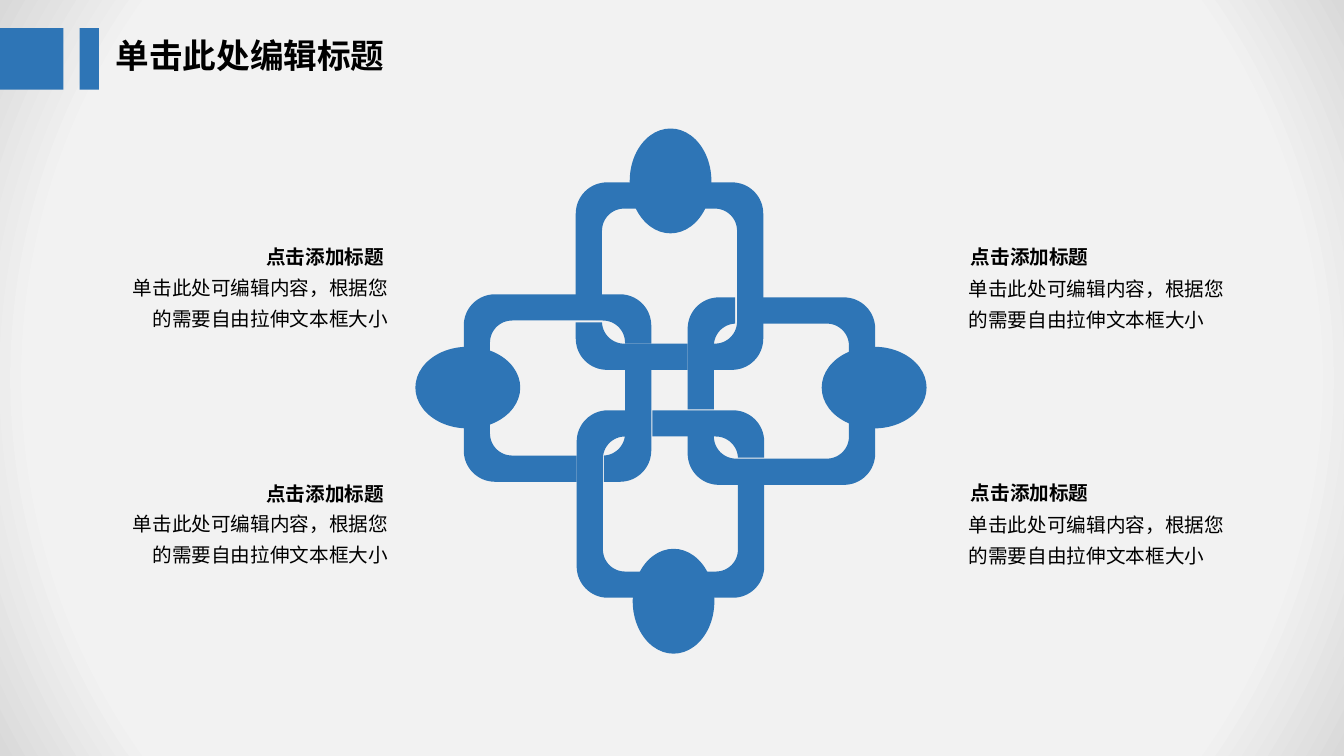
from dataclasses import dataclass
from math import cos, radians, sin

from pptx import Presentation
from pptx.dml.color import RGBColor
from pptx.enum.shapes import MSO_SHAPE as Preset
from pptx.enum.text import MSO_ANCHOR as Anchor, PP_ALIGN as Align
from pptx.oxml import parse_xml
from pptx.oxml.ns import nsdecls, qn
from pptx.util import Inches, Pt

BLUE = "2E75B6"
BLACK = "000000"
CJK_FONT = "Noto Sans CJK SC"
HEADING = "点击添加标题"
BODY = "单击此处可编辑内容，根据您的需要自由拉伸文本框大小"

SIDE, BAND = 1.86, 0.26
OUTER, INNER = 0.31, 0.22
NEAR, FAR = OUTER, SIDE - OUTER
INNER_NEAR, INNER_FAR = BAND + INNER, SIDE - BAND - INNER
EDGE = SIDE - BAND
KNOB_WIDTH, KNOB_HEIGHT = 1.04, 0.81

Point = tuple[float, float]


@dataclass
class Link:
    left: float
    top: float
    knob_left: float
    knob_top: float
    quarter_turns: int


@dataclass
class Caption:
    heading_left: float
    heading_top: float
    body_left: float
    body_top: float
    align: Align


LINKS = [
    Link(4.6, 2.92, 4.12, 3.44, 0),
    Link(5.71, 1.81, 6.13, 1.39, 1),
    Link(5.72, 4.07, 6.16, 5.56, 3),
    Link(6.82, 2.95, 8.15, 3.44, 2),
]
CAPTIONS = [
    Caption(2.38, 2.31, 1.12, 2.62, Align.RIGHT),
    Caption(9.53, 2.31, 9.51, 2.63, Align.LEFT),
    Caption(2.38, 4.66, 1.12, 4.96, Align.RIGHT),
    Caption(9.53, 4.65, 9.51, 4.97, Align.LEFT),
]


def color(value: str) -> RGBColor:
    return RGBColor.from_string(value)


def arc(x: float, y: float, radius: float, start: float, end: float) -> list[Point]:
    steps = 16
    angles = [radians(start + (end - start) * i / steps) for i in range(steps + 1)]
    return [(x + radius * cos(a), y + radius * sin(a)) for a in angles]


def link_outlines() -> list[list[Point]]:
    corner = [
        (EDGE, 0.75), (SIDE, 0.75),
        *arc(FAR, FAR, OUTER, 0, 90),
        (1.39, SIDE), (1.39, EDGE),
        *arc(INNER_FAR, INNER_FAR, INNER, 85, 0),
    ]
    loop = [
        (1.12, SIDE),
        *arc(NEAR, FAR, OUTER, 90, 180),
        *arc(NEAR, NEAR, OUTER, 180, 270),
        *arc(FAR, NEAR, OUTER, 270, 360),
        (SIDE, 0.49), (EDGE, 0.49),
        *arc(INNER_FAR, INNER_NEAR, INNER, 360, 270),
        *arc(INNER_NEAR, INNER_NEAR, INNER, 270, 180),
        *arc(INNER_NEAR, INNER_FAR, INNER, 180, 90),
        (1.12, EDGE),
    ]
    return [corner, loop]


def paint(shape) -> None:
    shape.shadow.inherit = False
    shape.fill.solid()
    shape.fill.fore_color.rgb = color(BLUE)
    shape.line.fill.background()


def add_preset(shapes, preset: Preset, left: float, top: float,
               width: float, height: float, rotation: float = 0) -> None:
    shape = shapes.add_shape(preset, Inches(left), Inches(top), Inches(width), Inches(height))
    shape.rotation = rotation
    paint(shape)


def add_link(slide, link: Link) -> None:
    shapes = slide.shapes.add_group_shape().shapes
    first, *others = [[(Inches(x), Inches(y)) for x, y in outline] for outline in link_outlines()]
    builder = shapes.build_freeform(*first[0])
    builder.add_line_segments(first[1:])
    for outline in others:
        builder.move_to(*outline[0])
        builder.add_line_segments(outline[1:])
    ring = builder.convert_to_shape(Inches(link.left), Inches(link.top))
    ring.rotation = link.quarter_turns * 90
    paint(ring)
    add_preset(shapes, Preset.OVAL, link.knob_left, link.knob_top,
               KNOB_WIDTH, KNOB_HEIGHT, link.quarter_turns % 2 * 90)


def add_text(shapes, text: str, left: float, top: float, width: float, height: float,
             size: float, font: str, bold: bool, spacing: float,
             align: Align = Align.LEFT, before: float = 0,
             anchor: Anchor = Anchor.TOP) -> None:
    box = shapes.add_textbox(Inches(left), Inches(top), Inches(width), Inches(height))
    frame = box.text_frame
    frame.word_wrap = True
    frame.vertical_anchor = anchor
    paragraph = frame.paragraphs[0]
    paragraph.text = text
    paragraph.alignment = align
    paragraph.line_spacing = spacing
    paragraph.space_before = Pt(before)
    paragraph.font.size = Pt(size)
    paragraph.font.bold = bold
    paragraph.font.color.rgb = color(BLACK)
    paragraph.font.name = font
    latin = paragraph._p.find(f".//{qn('a:latin')}")
    latin.addnext(parse_xml(f'<a:ea {nsdecls("a")} typeface="{CJK_FONT}"/>'))


def add_caption(slide, caption: Caption) -> None:
    add_text(slide.shapes, HEADING, caption.heading_left, caption.heading_top, 1.53, 0.41,
             14, CJK_FONT, True, 1.3, caption.align)
    add_text(slide.shapes, BODY, caption.body_left, caption.body_top, 2.83, 0.71,
             14, "Calibri", False, 1.3, caption.align, 2.8)


def add_title(slide) -> None:
    shapes = slide.shapes.add_group_shape().shapes
    for left, width in ((0, 0.63), (0.79, 0.19)):
        add_preset(shapes, Preset.RECTANGLE, left, 0.28, width, 0.61)
    add_text(shapes, "单击此处编辑标题", 1.05, 0.36, 2.97, 0.43,
             24, CJK_FONT, True, 0.9, anchor=Anchor.MIDDLE)


def set_background(slide) -> None:
    fill = slide.background.fill
    fill.gradient()
    for stop, (position, value) in zip(fill.gradient_stops, ((0.83, "F2F2F2"), (1, "D9D9D9"))):
        stop.position = position
        stop.color.rgb = color(value)
    linear = slide._element.find(f".//{qn('a:lin')}")
    radial = parse_xml(
        f'<a:path {nsdecls("a")} path="circle">'
        '<a:fillToRect l="50000" t="50000" r="50000" b="50000"/></a:path>')
    linear.getparent().replace(linear, radial)


def main() -> None:
    presentation = Presentation()
    presentation.slide_width = Inches(13.33)
    presentation.slide_height = Inches(7.5)
    slide = presentation.slides.add_slide(presentation.slide_layouts[6])
    set_background(slide)
    for caption in CAPTIONS:
        add_caption(slide, caption)
    for link in LINKS:
        add_link(slide, link)
    add_title(slide)
    presentation.save("out.pptx")


if __name__ == "__main__":
    main()
